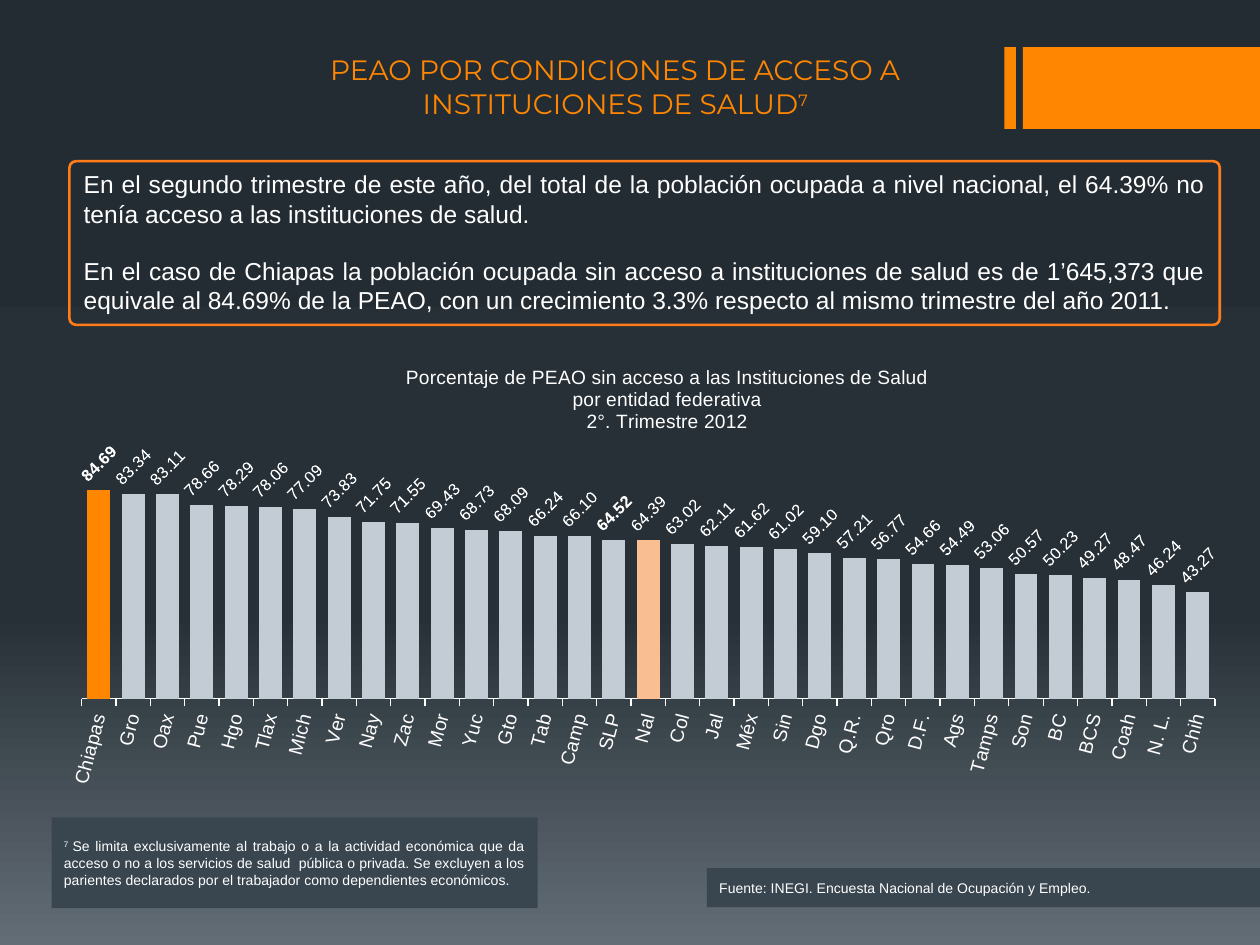
from copy import deepcopy

from lxml import etree
from pptx import Presentation
from pptx.chart.data import CategoryChartData
from pptx.dml.color import RGBColor
from pptx.enum.chart import XL_CHART_TYPE as CT, XL_LABEL_POSITION as LP, XL_TICK_MARK as TM
from pptx.enum.shapes import MSO_SHAPE as SH
from pptx.enum.text import MSO_ANCHOR as ANC, MSO_AUTO_SIZE as FIT, PP_ALIGN as AL
from pptx.oxml import parse_xml
from pptx.oxml.ns import nsdecls, qn
from pptx.util import Cm, Pt

COLORS = {
    "orange": "FF8600", "border": "FF7C19", "peach": "F9BE92", "bar": "C3CCD4",
    "panel": "394650", "white": "FFFFFF",
    "top": "242C33", "middle": "273037", "bottom": "636D76",
}
RGB = {name: RGBColor.from_string(value) for name, value in COLORS.items()}


def set_font(font, size, color="white", name="Arial", bold=False):
    font.size, font.name, font.bold = Pt(size), name, bold
    font.color.rgb = RGB[color]


def add_box(s, kind, x, y, w, h, fill=None):
    sp = s.shapes.add_shape(kind, Cm(x), Cm(y), Cm(w), Cm(h))
    sp.shadow.inherit = False
    sp.line.fill.background()
    if fill:
        sp.fill.solid()
        sp.fill.fore_color.rgb = RGB[fill]
    else:
        sp.fill.background()
    return sp


prs = Presentation()
prs.slide_width, prs.slide_height = Cm(25.4), Cm(19.05)
s = prs.slides.add_slide(prs.slide_layouts[5])

# Background: three-stop vertical gradient
bg = s.background.fill
bg.gradient()
bg.gradient_angle = 270
stop_list = s.element.find(".//" + qn("a:gsLst"))
stop_list.append(deepcopy(stop_list[0]))
for stop, (name, position) in zip(bg.gradient_stops, [("top", 0), ("middle", 0.65), ("bottom", 1)]):
    stop.color.rgb, stop.position = RGB[name], position

# Orange corner bars
for x, w in [(20.25, 0.23), (20.62, 4.78)]:
    add_box(s, SH.RECTANGLE, x, 0.95, w, 1.65, "orange")

# Title
title = s.shapes.title
title.left, title.top, title.width, title.height = Cm(4.67), Cm(0.94), Cm(15.47), Cm(1.63)
tf = title.text_frame
tf.auto_size, tf.vertical_anchor, tf.word_wrap = FIT.NONE, ANC.TOP, True
p = tf.paragraphs[0]
p.alignment = AL.CENTER
set_font(p.font, 16, "orange", "Montserrat")
p.add_run().text = "PEAO POR CONDICIONES DE ACCESO A INSTITUCIONES DE SALUD"
r = p.add_run()
r.text = "7"
r.font._element.set("baseline", "30000")

# Key findings
sp = add_box(s, SH.ROUNDED_RECTANGLE, 1.4, 3.25, 23.19, 3.3)
sp.adjustments[0] = 0.04
sp.line.color.rgb, sp.line.width = RGB["border"], Pt(1.5)
tf = sp.text_frame
tf.word_wrap, tf.vertical_anchor = True, ANC.TOP
findings = [
    "En el segundo trimestre de este año, del total de la población ocupada a nivel nacional, "
    "el 64.39% no tenía acceso a las instituciones de salud.",
    "En el caso de Chiapas la población ocupada sin acceso a instituciones de salud es de 1’645,373 "
    "que equivale al 84.69% de la PEAO, con un crecimiento 3.3% respecto al mismo trimestre del año 2011.",
]
for i, text in enumerate(findings):
    p = tf.add_paragraph() if i else tf.paragraphs[0]
    p.text, p.alignment = text, AL.JUSTIFY
    if i:
        p.space_before = Pt(16)
    set_font(p.font, 14)

# Source and footnote panels
panels = [
    ((14.25, 17.5, 11.15, 0.79), "", "Fuente: INEGI. Encuesta Nacional de Ocupación y Empleo."),
    ((1.04, 16.48, 9.8, 1.83), "7 ",
     "Se limita exclusivamente al trabajo o a la actividad económica que da acceso o no a los "
     "servicios de salud  pública o privada. Se excluyen a los parientes declarados por el "
     "trabajador como dependientes económicos."),
]
for place, mark, text in panels:
    tf = add_box(s, SH.RECTANGLE, *place, "panel").text_frame
    tf.word_wrap, tf.vertical_anchor = True, ANC.MIDDLE
    p = tf.paragraphs[0]
    p.alignment = AL.JUSTIFY
    set_font(p.font, 8)
    if mark:
        r = p.add_run()
        r.text = mark
        r.font._element.set("baseline", "30000")
    p.add_run().text = text

# Chart data
data = CategoryChartData(number_format="0.00")
data.categories = [
    "Chiapas", "Gro", "Oax", "Pue", "Hgo", "Tlax", "Mich", "Ver", "Nay", "Zac", "Mor",
    "Yuc", "Gto", "Tab", "Camp", "SLP", "Nal", "Col", "Jal", "Méx", "Sin", "Dgo",
    "Q.R.", "Qro", "D.F.", "Ags", "Tamps", "Son", "BC", "BCS", "Coah", "N. L.", "Chih",
]
data.add_series("Series 1", [
    84.69, 83.34, 83.11, 78.66, 78.29, 78.06, 77.09, 73.83, 71.75, 71.55, 69.43,
    68.73, 68.09, 66.24, 66.10, 64.52, 64.39, 63.02, 62.11, 61.62, 61.02, 59.10,
    57.21, 56.77, 54.66, 54.49, 53.06, 50.57, 50.23, 49.27, 48.47, 46.24, 43.27,
])
chart = s.shapes.add_chart(CT.COLUMN_CLUSTERED, Cm(1.4), Cm(7.16), Cm(23.19), Cm(9.12), data).chart
chart.has_legend = False
set_font(chart.font, 10)

# Chart title
chart.has_title = True
tf = chart.chart_title.text_frame
lines = ["Porcentaje de PEAO sin acceso a las Instituciones de Salud",
         "por entidad federativa", "2°. Trimestre 2012"]
for i, text in enumerate(lines):
    p = tf.add_paragraph() if i else tf.paragraphs[0]
    p.text = text
    set_font(p.font, 11)
chart.chart_title.include_in_layout = False

# Axes
value_axis = chart.value_axis
value_axis.minimum_scale, value_axis.maximum_scale = 0, 90
value_axis.has_major_gridlines = False
value_axis.visible = False
axis = chart.category_axis
axis.major_tick_mark = TM.OUTSIDE
axis.format.line.color.rgb = RGB["white"]
set_font(axis.tick_labels.font, 11)

# Columns, with the state and the national value highlighted
plot = chart.plots[0]
plot.gap_width, plot.vary_by_categories = 50, False
series = plot.series[0]
series.format.fill.solid()
series.format.fill.fore_color.rgb = RGB["bar"]
for i, color in [(0, "orange"), (16, "peach")]:
    fill = series.points[i].format.fill
    fill.solid()
    fill.fore_color.rgb = RGB[color]

# Value labels
labels = series.data_labels
labels.show_value, labels.position = True, LP.OUTSIDE_END
labels.number_format, labels.number_format_is_linked = "0.00", False
set_font(labels.font, 9.5)
for i in (0, 15):
    label = series.points[i].data_label
    set_font(label.font, 9.5, bold=True)
    label.position = LP.OUTSIDE_END

# Slanted text: 45 degrees on values, 75 on states
for parent, angle in [(series._element, 45), (axis._element, 75)]:
    for body in parent.iter(qn("a:bodyPr")):
        body.set("rot", str(-angle * 60000))
        body.set("vert", "horz")

# Manual places of the chart title and the plot area
title_el, plot_el = chart.chart_title._element, chart._chartSpace.chart.plotArea
for parent, position, inner in [
    (title_el, {"x": 0.29, "y": 0.01}, False),
    (plot_el, {"x": 0.01, "y": 0.27, "w": 0.99, "h": 0.49}, True),
]:
    for old in parent.findall(qn("c:layout")):
        parent.remove(old)
    layout = parse_xml(f"<c:layout {nsdecls('c')}><c:manualLayout/></c:layout>")
    settings = {"layoutTarget": "inner"} if inner else {}
    settings.update({"xMode": "edge", "yMode": "edge"}, **position)
    for tag, value in settings.items():
        etree.SubElement(layout[0], qn("c:" + tag)).set("val", str(value))
    parent.insert(0 if inner else 1, layout)

prs.save("out.pptx")
